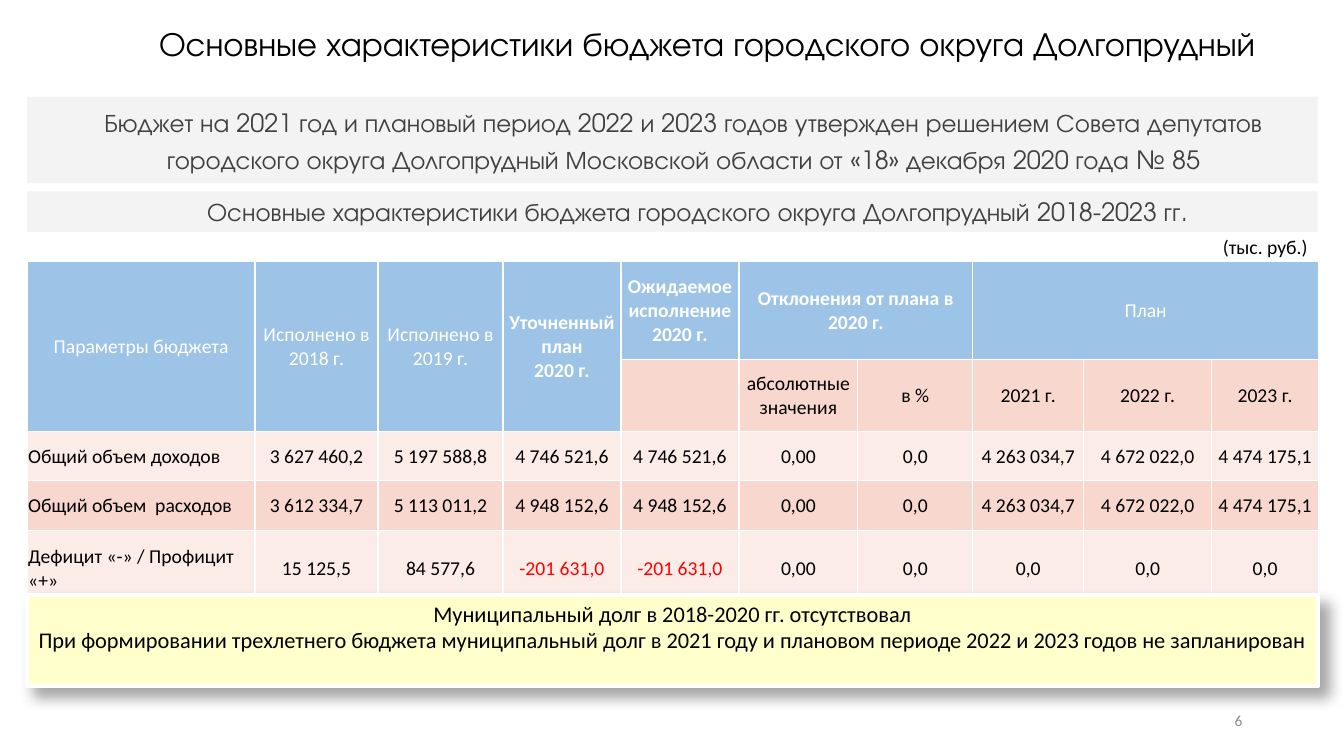
from lxml import etree
from pptx import Presentation
from pptx.dml.color import RGBColor
from pptx.enum.shapes import MSO_SHAPE
from pptx.enum.text import MSO_ANCHOR, PP_ALIGN
from pptx.oxml import parse_xml
from pptx.oxml.ns import nsdecls, qn
from pptx.util import Inches, Pt

LEFT, CENTER, RIGHT = PP_ALIGN.LEFT, PP_ALIGN.CENTER, PP_ALIGN.RIGHT
TOP, MIDDLE = MSO_ANCHOR.TOP, MSO_ANCHOR.MIDDLE
RECT = MSO_SHAPE.RECTANGLE

BLACK = RGBColor(0x00, 0x00, 0x00)
WHITE = RGBColor(0xFF, 0xFF, 0xFF)
DARK = RGBColor(0x40, 0x40, 0x40)
GRAY = RGBColor(0x8C, 0x8C, 0x8C)
RED = RGBColor(0xFF, 0x00, 0x00)
PANEL = RGBColor(0xED, 0xED, 0xED)
BLUE = RGBColor(0x9D, 0xC3, 0xE6)
PINK = RGBColor(0xF8, 0xD7, 0xCE)
PALE = RGBColor(0xFC, 0xEC, 0xE8)
YELLOW = RGBColor(0xFF, 0xFF, 0xCC)
HEADING, BODY = "TeX Gyre Adventor", "Calibri"


def write(tf, text, font, size, color, align=CENTER, anchor=TOP, bold=False):
    """Fill a text frame, one paragraph per line of text."""
    tf.text = text
    tf.word_wrap = True
    tf.vertical_anchor = anchor
    for p in tf.paragraphs:
        p.alignment = align
        p.font.name, p.font.size, p.font.bold = font, Pt(size), bold
        p.font.color.rgb = color


def add_box(left, top, width, height, fill):
    sp = s.shapes.add_shape(RECT, Inches(left), Inches(top), Inches(width), Inches(height))
    sp.shadow.inherit = False
    sp.fill.solid()
    sp.fill.fore_color.rgb = fill
    sp.line.fill.background()
    return sp


prs = Presentation()
prs.slide_width, prs.slide_height = Inches(13.33), Inches(7.5)
s = prs.slides.add_slide(prs.slide_layouts[6])

# Translucent heading panels: top, height, indent, line spacing, text
panels = [
    (0.96, 0.86, 0.22, 1.2,
     "Бюджет на 2021 год и плановый период 2022 и 2023 годов утвержден решением Совета депутатов "
     "городского округа Долгопрудный Московской области от «18» декабря 2020 года № 85"),
    (1.9, 0.4, 0.5, 1.0,
     "Основные характеристики бюджета городского округа Долгопрудный 2018-2023 гг."),
]
for top, height, indent, spacing, text in panels:
    sp = add_box(0.27, top, 12.8, height, PANEL)
    color = sp.fill._xPr.find(qn("a:solidFill"))[0]
    etree.SubElement(color, qn("a:alpha")).set("val", "66000")
    write(sp.text_frame, text, HEADING, 18, DARK)
    p = sp.text_frame.paragraphs[0]
    p.line_spacing = spacing
    p._p.get_or_add_pPr().set("marL", str(Inches(indent)))

# Title, unit note and page number
labels = [
    (0.96, 0.18, 12.11, 0.5, "Основные характеристики бюджета городского округа Долгопрудный",
     HEADING, 24, BLACK, CENTER, TOP),
    (12.03, 2.28, 1.05, 0.34, "(тыс. руб.)", BODY, 14, BLACK, LEFT, TOP),
    (9.42, 6.95, 3, 0.4, "6", BODY, 11, GRAY, RIGHT, MIDDLE),
]
for left, top, width, height, *content in labels:
    sp = s.shapes.add_textbox(Inches(left), Inches(top), Inches(width), Inches(height))
    write(sp.text_frame, *content)

# Budget table
col_widths = [2.26, 1.22, 1.24, 1.17, 1.17, 1.18, 1.14, 1.1, 1.27, 1.06]
row_heights = [0.98, 0.71, 0.49, 0.49, 0.75]
rows = [
    ["Параметры бюджета", "Исполнено в\n2018 г.", "Исполнено в\n2019 г.",
     "Уточненный план\n2020 г.", "Ожидаемое исполнение\n2020 г.",
     "Отклонения от плана в 2020 г.", "", "План", "", ""],
    ["", "", "", "", "", "абсолютные значения", "в %", "2021 г.", "2022 г.", "2023 г."],
    ["Общий объем доходов", "3 627 460,2", "5 197 588,8", "4 746 521,6", "4 746 521,6",
     "0,00", "0,0", "4 263 034,7", "4 672 022,0", "4 474 175,1"],
    ["Общий объем  расходов", "3 612 334,7", "5 113 011,2", "4 948 152,6", "4 948 152,6",
     "0,00", "0,0", "4 263 034,7", "4 672 022,0", "4 474 175,1"],
    ["Дефицит «-» / Профицит «+»", "15 125,5", "84 577,6", "-201 631,0", "-201 631,0",
     "0,00", "0,0", "0,0", "0,0", "0,0"],
]
row_fills = [BLUE, PINK, PALE, PINK, PALE]
bold_headers = (3, 4, 5)

table = s.shapes.add_table(len(rows), len(col_widths), Inches(0.27), Inches(2.59),
                           Inches(sum(col_widths)), Inches(sum(row_heights))).table
for column, width in zip(table.columns, col_widths):
    column.width = Inches(width)
for row, height in zip(table.rows, row_heights):
    row.height = Inches(height)

for i, values in enumerate(rows):
    for j, value in enumerate(values):
        cell = table.cell(i, j)
        cell.margin_left = cell.margin_right = cell.margin_top = Inches(0.01)
        cell.margin_bottom = 0
        cell.vertical_anchor = MIDDLE
        cell.fill.solid()
        cell.fill.fore_color.rgb = row_fills[i]
        cell.text = value
        for p in cell.text_frame.paragraphs:
            p.alignment = LEFT if i > 1 and j == 0 else CENTER
            p.font.name, p.font.size = BODY, Pt(14)
            p.font.bold = i == 0 and j in bold_headers
            p.font.color.rgb = WHITE if i == 0 else RED if value.startswith("-") else BLACK

for j in range(4):
    table.cell(0, j).merge(table.cell(1, j))
for first, last in ((5, 6), (7, 9)):
    table.cell(0, first).merge(table.cell(0, last))

# Municipal debt note with a soft shadow
sp = add_box(0.27, 5.9, 12.8, 0.91, YELLOW)
sp.line.color.rgb = WHITE
sp.line.width = Pt(3)
shadow = parse_xml(
    f'<a:outerShdw {nsdecls("a")} blurRad="{Pt(10.2)}" dist="{Pt(8)}" dir="2700000" algn="tl" '
    'rotWithShape="0"><a:srgbClr val="000000"><a:alpha val="35000"/></a:srgbClr></a:outerShdw>')
sp._element.spPr.find(qn("a:effectLst")).append(shadow)
write(sp.text_frame,
      "Муниципальный долг в 2018-2020 гг. отсутствовал\n"
      "При формировании трехлетнего бюджета муниципальный долг в 2021 году и плановом периоде "
      "2022 и 2023 годов не запланирован", BODY, 16, BLACK)

prs.save("out.pptx")
